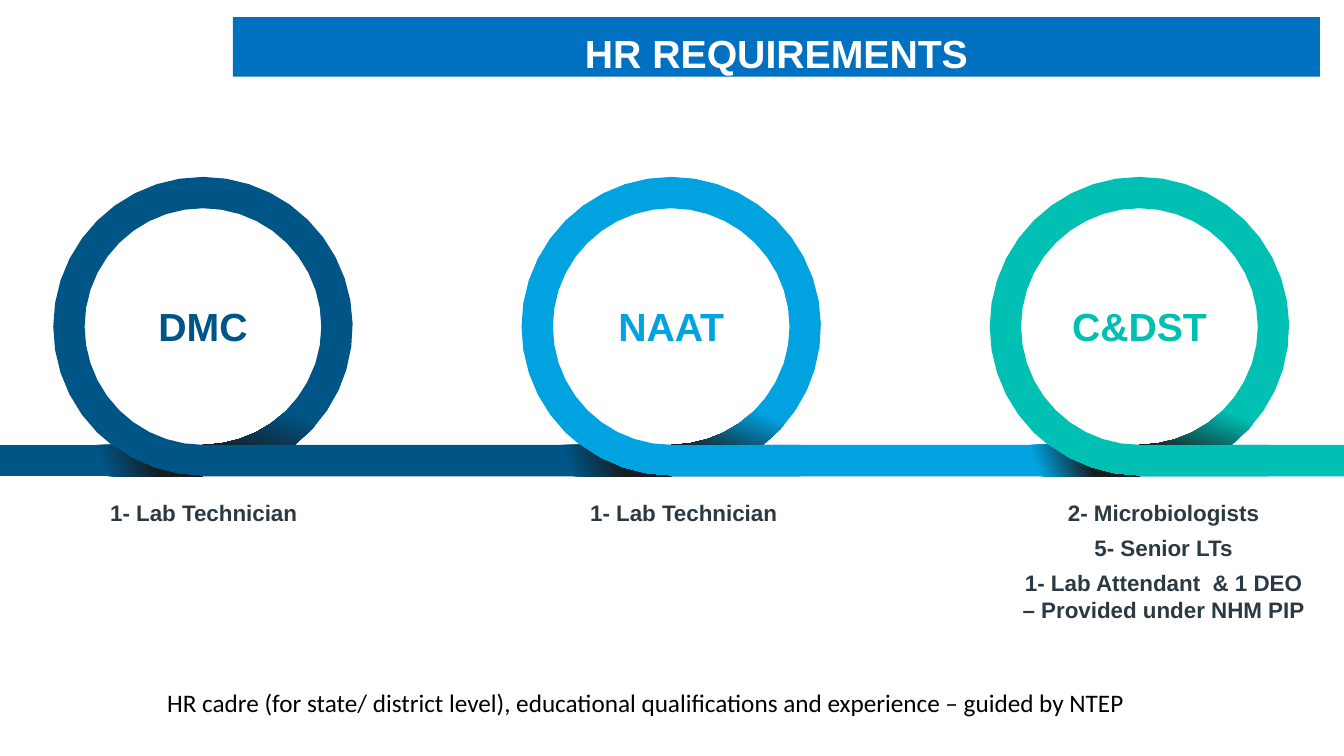
from math import asin, cos, degrees, radians, sin

from pptx import Presentation
from pptx.dml.color import RGBColor
from pptx.enum.shapes import MSO_SHAPE
from pptx.enum.text import MSO_ANCHOR, PP_ALIGN
from pptx.util import Inches, Pt

RECT = MSO_SHAPE.RECTANGLE
TOP = MSO_ANCHOR.TOP
LEFT, CENTER = PP_ALIGN.LEFT, PP_ALIGN.CENTER

THEME = {
    "banner": "0070C0", "white": "FFFFFF", "black": "000000",
    "body": "2B3A42", "shade": "161D21",
    "rings": ["005587", "00A3E0", "00BFB3"],
    "head_font": "Arial", "note_font": "Calibri",
    "head": 28, "item": 16, "note": 18,
}

prs = Presentation()
prs.slide_width, prs.slide_height = Inches(13.33), Inches(7.5)
s = prs.slides.add_slide(prs.slide_layouts[6])

# Grid of 100 columns by 100 rows
COL, ROW = prs.slide_width / 100, prs.slide_height / 100
ARC_STEP = 9  # degrees per side of an arc


def text(lines, col, row, cols, rows, *, size, color, font=THEME["head_font"],
         bold=True, align=CENTER, inset=(0, 0), after=0, spacing=None, fill=None):
    """Place a block of paragraphs on the grid; inset is (side, top) in inches."""
    box = [int(v) for v in (col * COL, row * ROW, cols * COL, rows * ROW)]
    if fill:
        sp = s.shapes.add_shape(RECT, *box)
        sp.shadow.inherit = False
        sp.fill.solid()
        sp.fill.fore_color.rgb = RGBColor.from_string(fill)
        sp.line.fill.background()
    else:
        sp = s.shapes.add_textbox(*box)
    tf = sp.text_frame
    tf.word_wrap = True
    tf.vertical_anchor = TOP
    tf.margin_left = tf.margin_right = Inches(inset[0])
    tf.margin_top, tf.margin_bottom = Inches(inset[1]), 0
    for i, line in enumerate(lines):
        p = tf.paragraphs[0] if i == 0 else tf.add_paragraph()
        p.alignment = align
        p.space_after = Pt(after)
        if spacing:
            p.line_spacing = spacing
        r = p.add_run()
        r.text = line
        r.font.name, r.font.size, r.font.bold = font, Pt(size), bold
        r.font.color.rgb = RGBColor.from_string(color)


def outline(cx, contours, color, fade_end=None, angle=0):
    """Draw contours of (x, y) points and (radius, from, to) arcs, in rows
    from a ring's centre; fade_end is where a gradient reaches its shade."""
    builder = None
    for contour in contours:
        pts = []
        for part in contour:
            if len(part) == 2:
                pts.append(part)
            else:
                radius, a0, a1 = part
                steps = max(2, round(abs(a1 - a0) / ARC_STEP))
                turns = [radians(a0 + (a1 - a0) * k / steps) for k in range(steps + 1)]
                pts += [(radius * cos(a), radius * sin(a)) for a in turns]
        pts = [(min(max(cx * COL + x * ROW, 0), prs.slide_width), (CY + y) * ROW)
               for x, y in pts]
        if builder is None:
            builder = s.shapes.build_freeform(*pts[0])
        else:
            builder.move_to(*pts[0])
        builder.add_line_segments(pts[1:], close=True)
    sp = builder.convert_to_shape()
    sp.shadow.inherit = False
    sp.line.fill.background()
    if fade_end is None:
        sp.fill.solid()
        sp.fill.fore_color.rgb = RGBColor.from_string(color)
        return
    sp.fill.gradient()
    sp.fill.gradient_angle = angle
    stops = zip(sp.fill.gradient_stops, (0.5, fade_end), (color, THEME["shade"]))
    for stop, position, rgb in stops:
        stop.position = position
        stop.color.rgb = RGBColor.from_string(rgb)


# Ring geometry: centres in columns, the rest in rows
CY = 43.2
OUTER, INNER = 19.8, 15.65
BAR, LEAD, FOLD = 79, 27.6, 5.35
CENTRES = [15.1 + 34.84 * i for i in range(3)]
COLORS = THEME["rings"]
EXIT = degrees(asin(INNER / OUTER))
FOLD_OUT, FOLD_IN = (degrees(asin(FOLD / radius)) for radius in (OUTER, INNER))

# Title banner
text(["HR REQUIREMENTS"], 17.33, 2.27, 80.87, 7.87, size=THEME["head"],
     color=THEME["white"], inset=(0, 0.12), fill=THEME["banner"])

# Rings, each running into its bar
for cx, color in zip(CENTRES, COLORS):
    outline(cx, [[(INNER, 0, 360)],
                 [(OUTER, -90, EXIT), (BAR, INNER), (BAR, OUTER), (OUTER, 90, 270)]],
            color)

# Shade on the bar that arrives from the left, in the previous ring's colour
for cx, color in zip(CENTRES, COLORS[:1] + COLORS[:2]):
    outline(cx, [[(-LEAD, INNER), (OUTER, 180 - EXIT, 90), (-LEAD, OUTER)]],
            color, fade_end=0.75, angle=20)

# Shade where each ring folds behind its bar
for cx, color in zip(CENTRES, COLORS):
    outline(cx, [[(OUTER, FOLD_OUT, EXIT), (INNER, 90, FOLD_IN)]],
            color, fade_end=1, angle=250)

# Ring names and staff lists
SITES = [
    ("DMC", ["1- Lab Technician"]),
    ("NAAT", ["1- Lab Technician"]),
    ("C&DST", ["2- Microbiologists", "5- Senior LTs",
               "1- Lab Attendant  & 1 DEO – Provided under NHM PIP"]),
]
for i, (name, staff) in enumerate(SITES):
    text([name], CENTRES[i] - 7.95, 40, 15.9, 7.07, size=THEME["head"],
         color=COLORS[i], inset=(0.1, 0.05), spacing=0.9)
    text(staff, 4.43 + 35.71 * i, 66, 21.45, 7.33 if len(staff) == 1 else 18,
         size=THEME["item"], color=THEME["body"], after=6)

# Closing note
text(["HR cadre (for state/ district level), educational qualifications and "
      "experience – guided by NTEP"], 11.7, 90.27, 87.25, 5.33,
     size=THEME["note"], color=THEME["black"], font=THEME["note_font"],
     bold=False, align=LEFT, inset=(0.1, 0.05))

prs.save("out.pptx")
